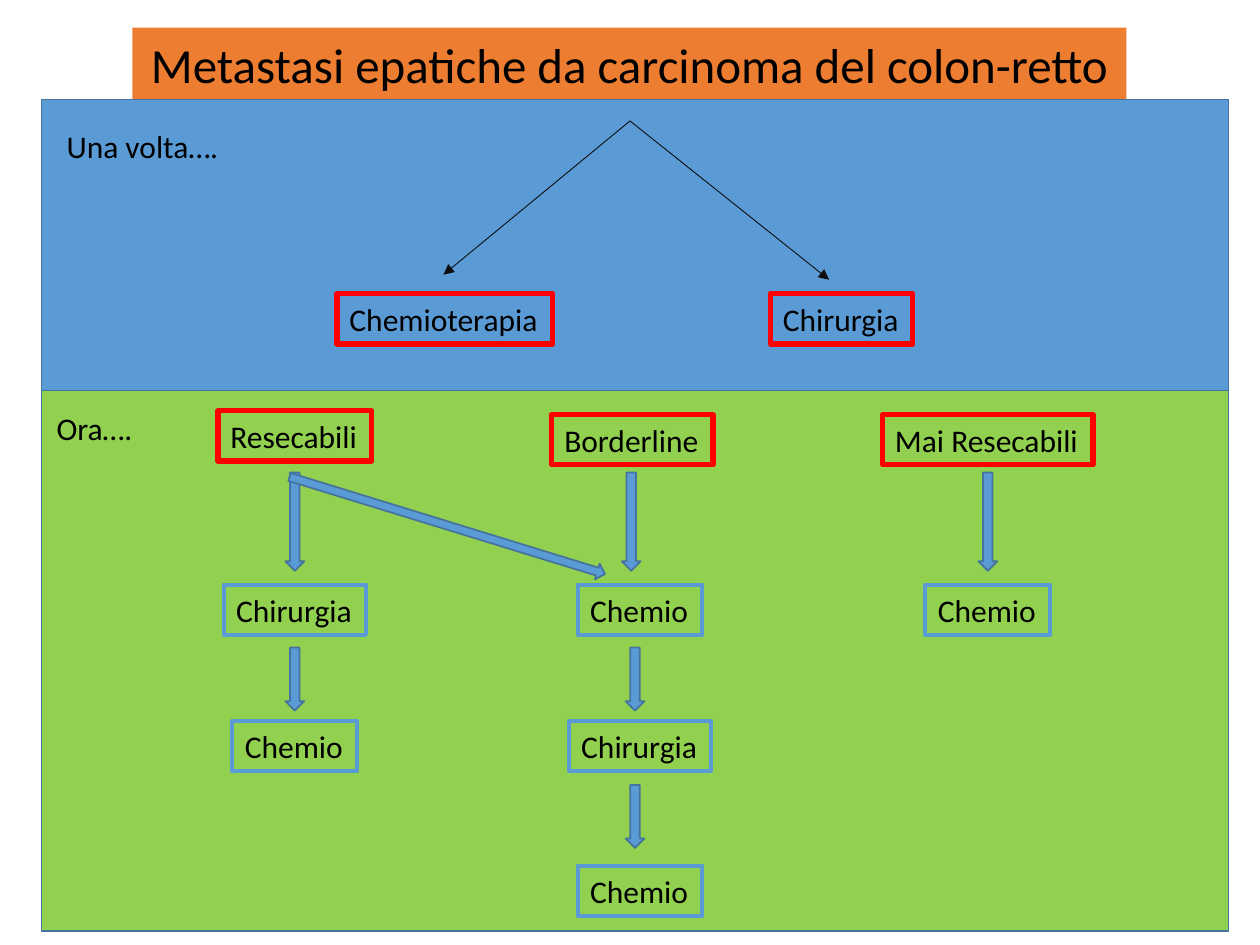
from dataclasses import dataclass

from lxml import etree
from pptx import Presentation
from pptx.dml.color import RGBColor
from pptx.enum.shapes import MSO_CONNECTOR, MSO_SHAPE
from pptx.enum.text import MSO_ANCHOR, MSO_AUTO_SIZE, PP_ALIGN
from pptx.oxml.ns import qn
from pptx.util import Inches, Pt

RECTANGLE, DOWN_ARROW = MSO_SHAPE.RECTANGLE, MSO_SHAPE.DOWN_ARROW
STRAIGHT = MSO_CONNECTOR.STRAIGHT
TOP = MSO_ANCHOR.TOP
FIT_SHAPE = MSO_AUTO_SIZE.SHAPE_TO_FIT_TEXT
LEFT, CENTER = PP_ALIGN.LEFT, PP_ALIGN.CENTER

BLUE = RGBColor(0x5B, 0x9B, 0xD5)
DARK_BLUE = RGBColor(0x43, 0x73, 0x9E)
GREEN = RGBColor(0x92, 0xD0, 0x50)
ORANGE = RGBColor(0xED, 0x7D, 0x31)
RED = RGBColor(0xFF, 0x00, 0x00)
BLACK = RGBColor(0x00, 0x00, 0x00)
INK = RGBColor(0x0D, 0x0D, 0x0D)

# Grid in inches: column centres and row tops
PANEL_LEFT, PANEL_WIDTH = 0.33, 9.42
PAST_TOP, NOW_TOP, PANEL_BOTTOM = 0.79, 3.1, 7.39
PAST_COLUMNS = (3.53, 6.68)
COLUMNS = (2.34, 5.08, 7.84)
ARROW_COLUMNS = (2.34, 5.04, 7.84)
BOX_HEIGHT = 0.4
PAST_ROW, GROUP_ROW = 2.33, 3.29
STEP_ROWS = (4.64, 5.72, 6.87)
BOX_WIDTHS = {"Chemioterapia": 1.71, "Chirurgia": 1.13, "Chemio": 0.99,
              "Resecabili": 1.22, "Borderline": 1.28, "Mai Resecabili": 1.67}


@dataclass(frozen=True)
class Box:
    text: str
    center: float
    top: float
    color: RGBColor = BLUE
    line_width: float = 2.25


@dataclass(frozen=True)
class Arrow:
    center: float
    top: float
    height: float
    width: float = 0.15
    rotation: float = 0


def write(shape, text: str, *, size: float = 18, align=LEFT) -> None:
    frame = shape.text_frame
    frame.text = text
    frame.word_wrap = False
    frame.auto_size = FIT_SHAPE
    frame.vertical_anchor = TOP
    paragraph = frame.paragraphs[0]
    paragraph.alignment = align
    paragraph.line_spacing = 1.0
    font = paragraph.runs[0].font
    font.name, font.size = "Calibri", Pt(size)
    font.color.rgb = BLACK


def add_figure(slide, kind, left: float, top: float, width: float, height: float, *,
               fill=None, line=DARK_BLUE, line_width: float = 1):
    shape = slide.shapes.add_shape(
        kind, Inches(left), Inches(top), Inches(width), Inches(height))
    shape.shadow.inherit = False
    if fill is None:
        shape.fill.background()
    else:
        shape.fill.solid()
        shape.fill.fore_color.rgb = fill
    shape.line.color.rgb = line
    shape.line.width = Pt(line_width)
    return shape


def draw_box(slide, box: Box) -> None:
    width = BOX_WIDTHS[box.text]
    shape = add_figure(slide, RECTANGLE, box.center - width / 2, box.top, width,
                       BOX_HEIGHT, line=box.color, line_width=box.line_width)
    write(shape, box.text)


def draw_arrow(slide, arrow: Arrow) -> None:
    shape = add_figure(slide, DOWN_ARROW, arrow.center - arrow.width / 2, arrow.top,
                       arrow.width, arrow.height, fill=BLUE)
    shape.rotation = arrow.rotation


def draw_branch(slide, start: tuple[float, float], end: tuple[float, float]) -> None:
    connector = slide.shapes.add_connector(
        STRAIGHT, *(Inches(value) for value in start + end))
    connector.line.color.rgb = INK
    connector.line.width = Pt(0.5)
    properties = connector.line._get_or_add_ln()
    etree.SubElement(properties, qn("a:tailEnd"), type="triangle")
    etree.SubElement(connector._element.spPr, qn("a:effectLst"))


def draw_label(slide, text: str, left: float, top: float, width: float) -> None:
    label = slide.shapes.add_textbox(
        Inches(left), Inches(top), Inches(width), Inches(BOX_HEIGHT))
    write(label, text)


def main() -> None:
    presentation = Presentation()
    presentation.slide_width, presentation.slide_height = Inches(10), Inches(7.5)
    slide = presentation.slides.add_slide(presentation.slide_layouts[5])

    # Title band
    title = slide.shapes.title
    title.left, title.top = Inches(1.05), Inches(0.22)
    title.width, title.height = Inches(7.89), Inches(0.57)
    title.fill.solid()
    title.fill.fore_color.rgb = ORANGE
    write(title, "Metastasi epatiche da carcinoma del colon-retto",
          size=28, align=CENTER)

    # Panels: now below, past above
    for top, bottom, color in ((NOW_TOP, PANEL_BOTTOM, GREEN),
                               (PAST_TOP, NOW_TOP, BLUE)):
        add_figure(slide, RECTANGLE, PANEL_LEFT, top, PANEL_WIDTH, bottom - top,
                   fill=color)
    draw_label(slide, "Una volta….", 0.43, 0.96, 1.42)
    draw_label(slide, "Ora….", 0.35, 3.2, 0.81)

    # Past: two alternatives
    for end in ((3.52, 2.18), (6.58, 2.22)):
        draw_branch(slide, (5, 0.96), end)
    for text, center in zip(("Chemioterapia", "Chirurgia"), PAST_COLUMNS):
        draw_box(slide, Box(text, center, PAST_ROW, RED, 3))

    # Now: patient groups
    first, second, third = COLUMNS
    for group in (Box("Resecabili", first, GROUP_ROW - 0.03, RED, 3),
                  Box("Borderline", second - 0.06, GROUP_ROW, RED, 3),
                  Box("Mai Resecabili", third, GROUP_ROW, RED, 3)):
        draw_box(slide, group)

    # Now: treatment sequence of each group
    sequences = (("Chirurgia", "Chemio"),
                 ("Chemio", "Chirurgia", "Chemio"),
                 ("Chemio",))
    for center, sequence in zip(COLUMNS, sequences):
        for text, top in zip(sequence, STEP_ROWS):
            draw_box(slide, Box(text, center, top))

    # Arrows between the steps
    first_arrow, second_arrow, third_arrow = ARROW_COLUMNS
    for arrow in (Arrow(first_arrow, 3.75, 0.78),
                  Arrow(second_arrow - 0.03, 3.75, 0.78),
                  Arrow(third_arrow, 3.75, 0.78),
                  Arrow(first_arrow, 5.14, 0.5),
                  Arrow(second_arrow, 5.14, 0.5),
                  Arrow(second_arrow, 6.23, 0.5),
                  Arrow(3.55, 2.86, 2.62, width=0.13, rotation=287.1)):
        draw_arrow(slide, arrow)

    presentation.save("out.pptx")


if __name__ == "__main__":
    main()
